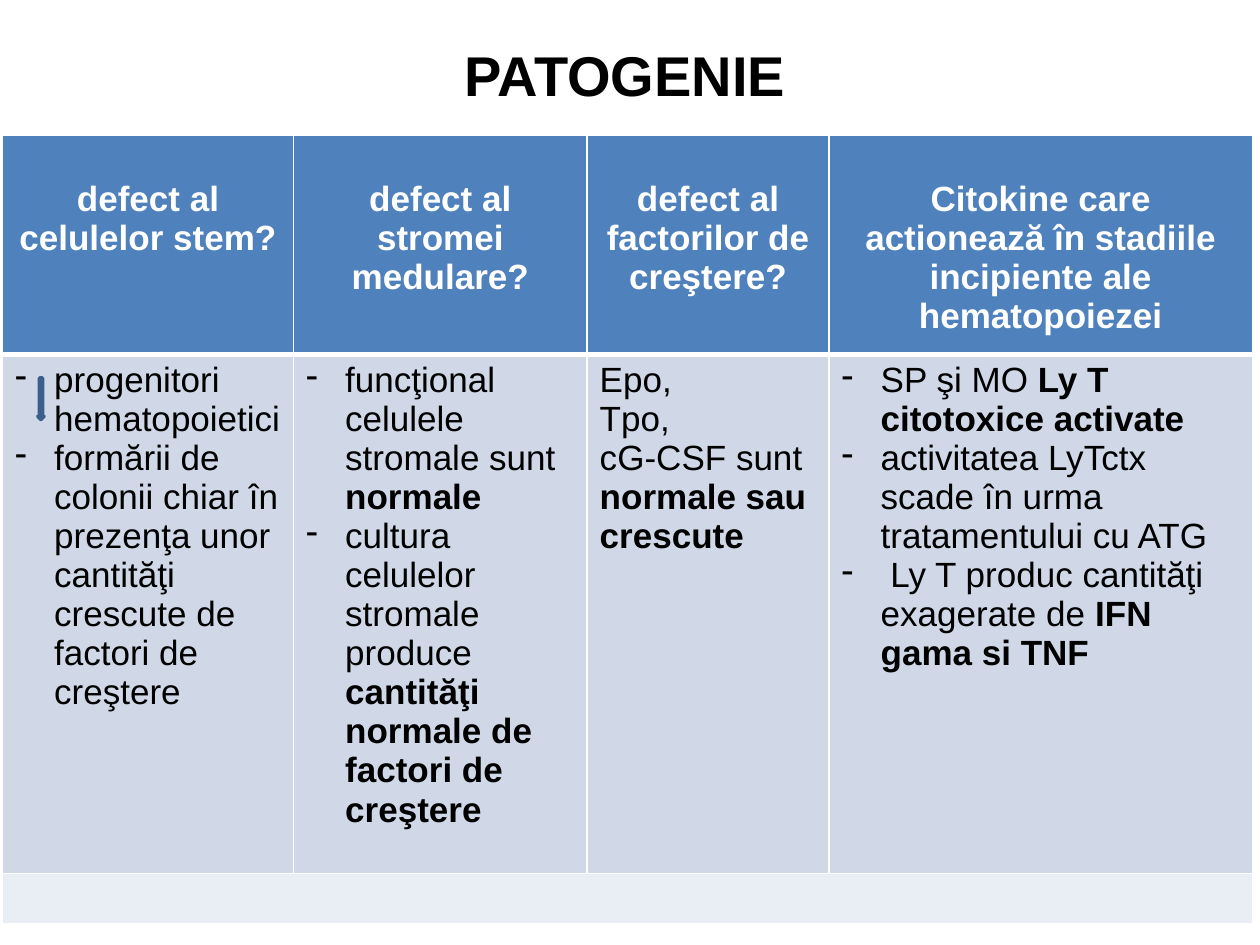
from lxml import etree
from pptx import Presentation
from pptx import util as u
from pptx.dml.color import RGBColor
from pptx.enum import shapes, text
from pptx.oxml import ns

WHITE, BLACK, BLUE = "FFFFFF", "000000", "4F81BD"
PALE, LIGHT, EDGE = "D0D8E8", "E9EDF4", "3A5F8C"

HEADS = [
    "defect al celulelor stem?",
    "defect al stromei medulare?",
    "defect al factorilor de creştere?",
    "Citokine care actionează în stadiile incipiente ale hematopoiezei",
]
BODY = [
    [["progenitori hematopoietici"],
     ["formării de colonii chiar în prezenţa unor cantităţi crescute de factori de creştere"]],
    [["funcţional celulele stromale sunt ", "normale"],
     ["cultura celulelor stromale produce ", "cantităţi normale de factori de creştere"]],
    [["Epo,"], ["Tpo,"], ["cG-CSF sunt ", "normale sau crescute"]],
    [["SP şi MO ", "Ly T citotoxice activate"],
     ["activitatea LyTctx scade în urma tratamentului cu ATG"],
     [" Ly T produc cantităţi exagerate de ", "IFN gama si TNF"]],
]
PLAIN_COL = 2


def paint(color, value):
    color.rgb = RGBColor.from_string(value)


def fill(item, value):
    item.fill.solid()
    paint(item.fill.fore_color, value)


class Deck:
    def __init__(self):
        self.font = {"name": "Arial", "size": u.Pt(20)}
        self.prs = Presentation()
        self.prs.slide_width, self.prs.slide_height = u.Inches(10), u.Inches(7.5)
        self.slide = self.prs.slides.add_slide(self.prs.slide_layouts[6])

    def run(self, para, words, color, **form):
        run = para.add_run()
        run.text = words
        for key, value in {**self.font, **form}.items():
            setattr(run.font, key, value)
        paint(run.font.color, color)

    def title(self, words, box):
        frame = self.slide.shapes.add_textbox(*map(u.Inches, box)).text_frame
        frame.word_wrap = True
        frame.vertical_anchor = text.MSO_ANCHOR.MIDDLE
        para = frame.paragraphs[0]
        para.alignment = text.PP_ALIGN.CENTER
        self.run(para, words, BLACK, size=u.Pt(32), bold=True)

    def table(self, box, cols, rows):
        grid = self.slide.shapes.add_table(len(rows), len(cols), *map(u.Inches, box)).table
        for parts, sizes, side in ((grid.columns, cols, "width"), (grid.rows, rows, "height")):
            for part, size in zip(parts, sizes):
                setattr(part, side, u.Inches(size))
        return grid

    def cell(self, cell, shade, paras=(), color=BLACK, bold=False, dash=False,
             align=text.PP_ALIGN.LEFT, top=0.05, edges=(1, 1)):
        fill(cell, shade)
        cell.margin_top = u.Inches(top)
        self.border(cell, *edges)
        frame = cell.text_frame
        for at, parts in enumerate(paras):
            para = frame.add_paragraph() if at else frame.paragraphs[0]
            para.alignment = align
            if dash:
                self.bullet(para)
            for step, words in enumerate(parts):
                self.run(para, words, color, bold=bold or step > 0)

    def border(self, cell, top, base):
        props = cell._tc.get_or_add_tcPr()
        sides = {"lnL": 1, "lnR": 1, "lnT": top, "lnB": base}
        for at, (side, width) in enumerate(sides.items()):
            line = etree.Element(ns.qn("a:" + side), w=str(u.Pt(width)))
            solid = etree.SubElement(line, ns.qn("a:solidFill"))
            etree.SubElement(solid, ns.qn("a:srgbClr"), val=WHITE)
            props.insert(at, line)

    def bullet(self, para):
        props = para._p.get_or_add_pPr()
        props.set("marL", str(u.Inches(0.31)))
        props.set("indent", str(u.Inches(-0.31)))
        etree.SubElement(props, ns.qn("a:buChar"), char="-")

    def arrow(self, box):
        shape = self.slide.shapes.add_shape(shapes.MSO_SHAPE.DOWN_ARROW, *map(u.Inches, box))
        shape.shadow.inherit = False
        fill(shape, BLUE)
        paint(shape.line.color, EDGE)
        shape.line.width = u.Pt(2)


def main():
    deck = Deck()
    deck.title("PATOGENIE", (0, 0.17, 9.92, 0.83))
    grid = deck.table((0.02, 1.07, 9.92, 6.15), (2.31, 2.33, 1.92, 3.36), (1.65, 4.12, 0.38))
    for col, (head, body) in enumerate(zip(HEADS, BODY)):
        deck.cell(grid.cell(0, col), BLUE, [[head]], WHITE, bold=True,
                  align=text.PP_ALIGN.CENTER, top=0.36, edges=(1, 3))
        deck.cell(grid.cell(1, col), PALE, body, dash=col != PLAIN_COL, edges=(3, 1))
        deck.cell(grid.cell(2, col), LIGHT)
    grid.cell(2, 0).merge(grid.cell(2, len(HEADS) - 1))
    deck.arrow((0.3, 3, 0.05, 0.33))
    deck.prs.save("out.pptx")


if __name__ == "__main__":
    main()
